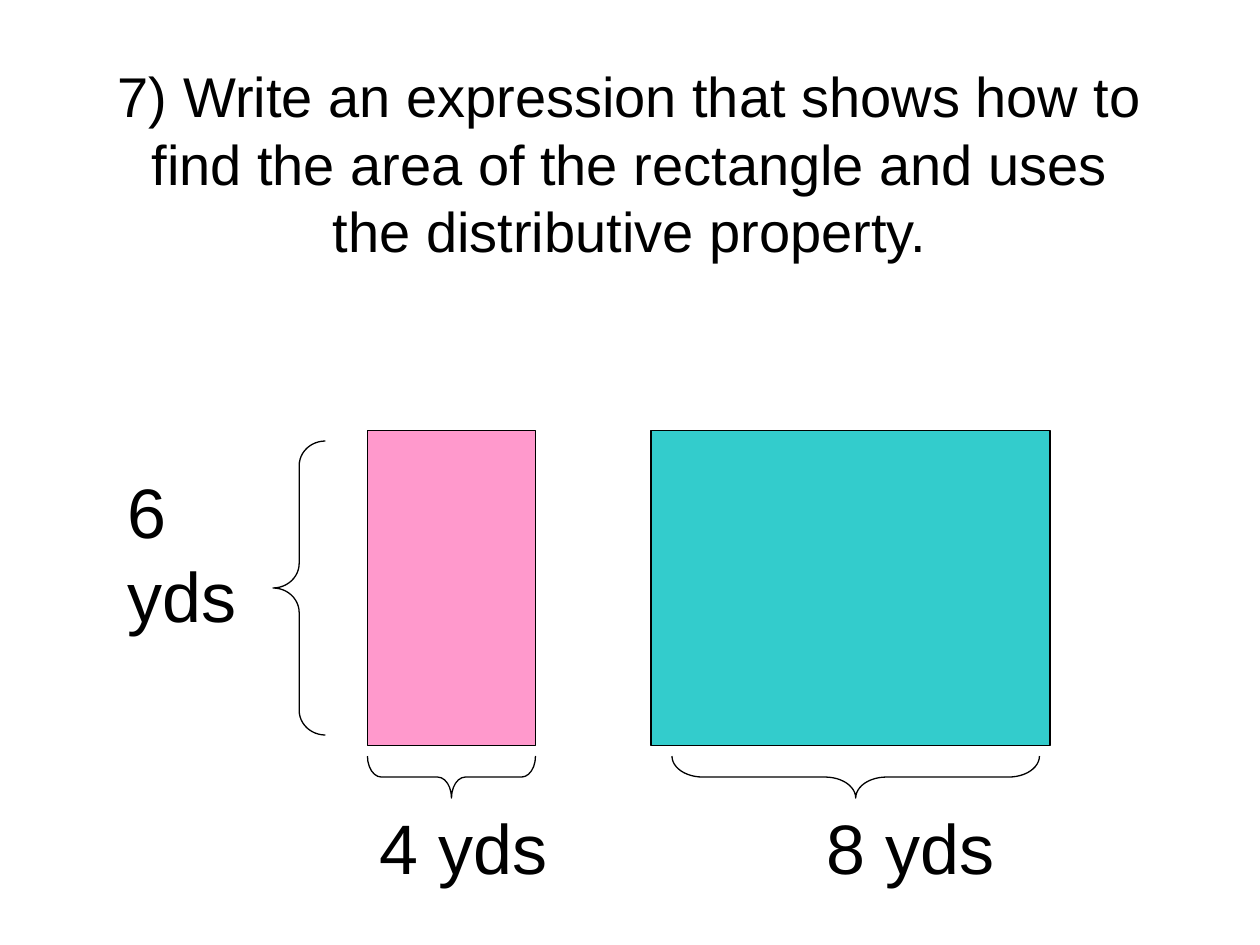
"""Build a slide on the area of two rectangles and the distributive property."""
from pptx import Presentation
from pptx.dml.color import RGBColor
from pptx.enum import shapes, text
from pptx.util import Pt

BLACK = RGBColor(0, 0, 0)
PINK = RGBColor(0xFF, 0x99, 0xCC)
TEAL = RGBColor(0x33, 0xCC, 0xCC)
KIND = shapes.MSO_SHAPE
LEFT, MID = text.PP_ALIGN.LEFT, text.PP_ALIGN.CENTER

deck = Presentation()
deck.slide_width, deck.slide_height = Pt(720), Pt(540)
slide = deck.slides.add_slide(deck.slide_layouts[6])

title = ("7) Write an expression that shows how to find the area of the "
         "rectangle and uses the distributive property.")
labels = [
    (title, (54, 48, 612, 90), 32, MID, text.MSO_ANCHOR.MIDDLE, 7.2),
    ("6 yds", (66, 264, 90, 103), 40, LEFT, text.MSO_ANCHOR.TOP, 7.2),
    ("4 yds", (210, 456, 120, 55.2), 40, LEFT, text.MSO_ANCHOR.TOP, 7.2),
    ("8 yds", (432, 456, 222, 55.2), 40, LEFT, text.MSO_ANCHOR.TOP, 40.5),
]
for words, area, size, align, anchor, inset in labels:
    frame = slide.shapes.add_textbox(*map(Pt, area)).text_frame
    form = {"word_wrap": True, "vertical_anchor": anchor,
            "margin_left": Pt(inset)}
    for key, value in form.items():
        setattr(frame, key, value)
    line = frame.paragraphs[0]
    line.text, line.alignment = words, align
    font = line.runs[0].font
    for key, value in {"name": "Arial", "size": Pt(size)}.items():
        setattr(font, key, value)
    font.color.rgb = BLACK

figures = [
    (KIND.RECTANGLE, (210, 246, 96, 180), PINK, 0, None),
    (KIND.RECTANGLE, (372, 246, 228, 180), TEAL, 0, None),
    (KIND.LEFT_BRACE, (156, 252, 30, 168), None, 0, 0.47),
    (KIND.LEFT_BRACE, (477, 339, 24, 210), None, 270, 0.73),
    (KIND.LEFT_BRACE, (246, 396, 24, 96), None, 270, 0.33),
]
for kind, area, fill, turn, curve in figures:
    shape = slide.shapes.add_shape(kind, *map(Pt, area))
    shape.shadow.inherit = False
    shape.rotation = turn
    shape.line.color.rgb = BLACK
    shape.line.width = Pt(0.75)
    if fill:
        shape.fill.solid()
        shape.fill.fore_color.rgb = fill
    else:
        shape.fill.background()
        shape.adjustments[0] = curve

deck.save("out.pptx")
